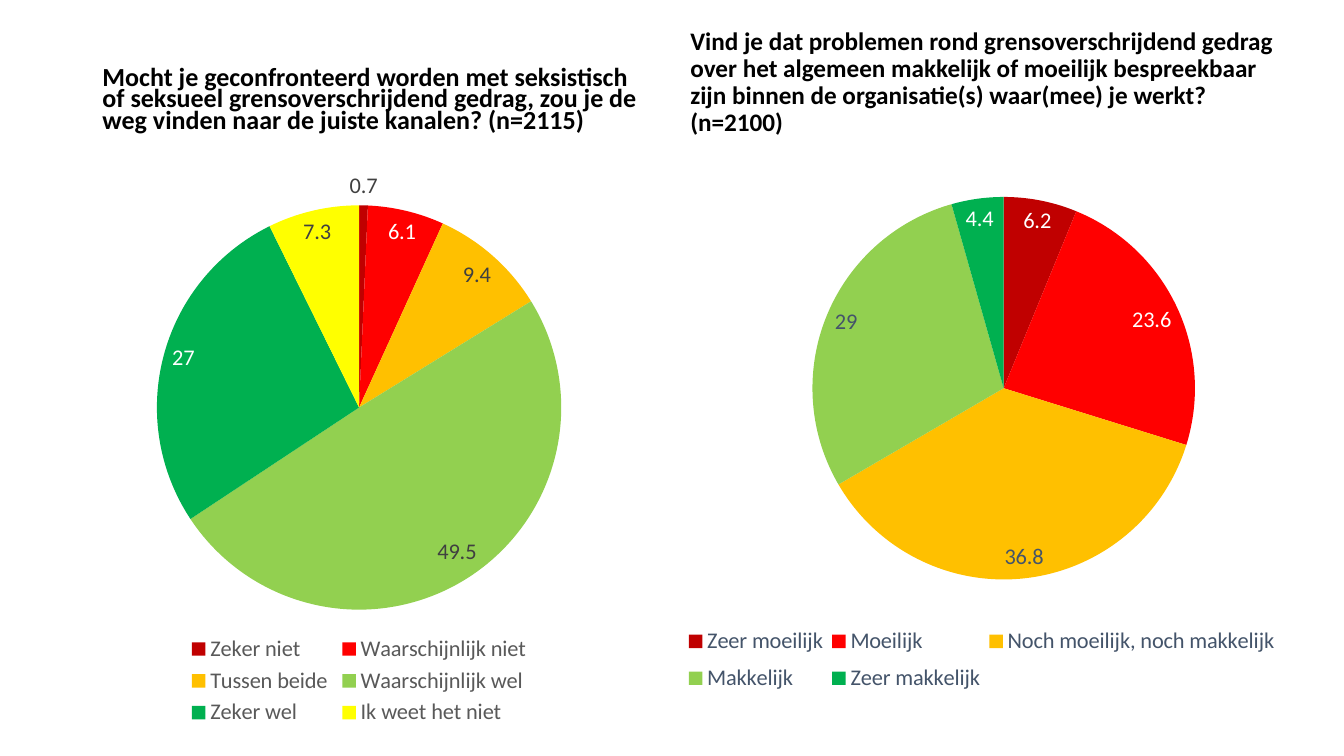
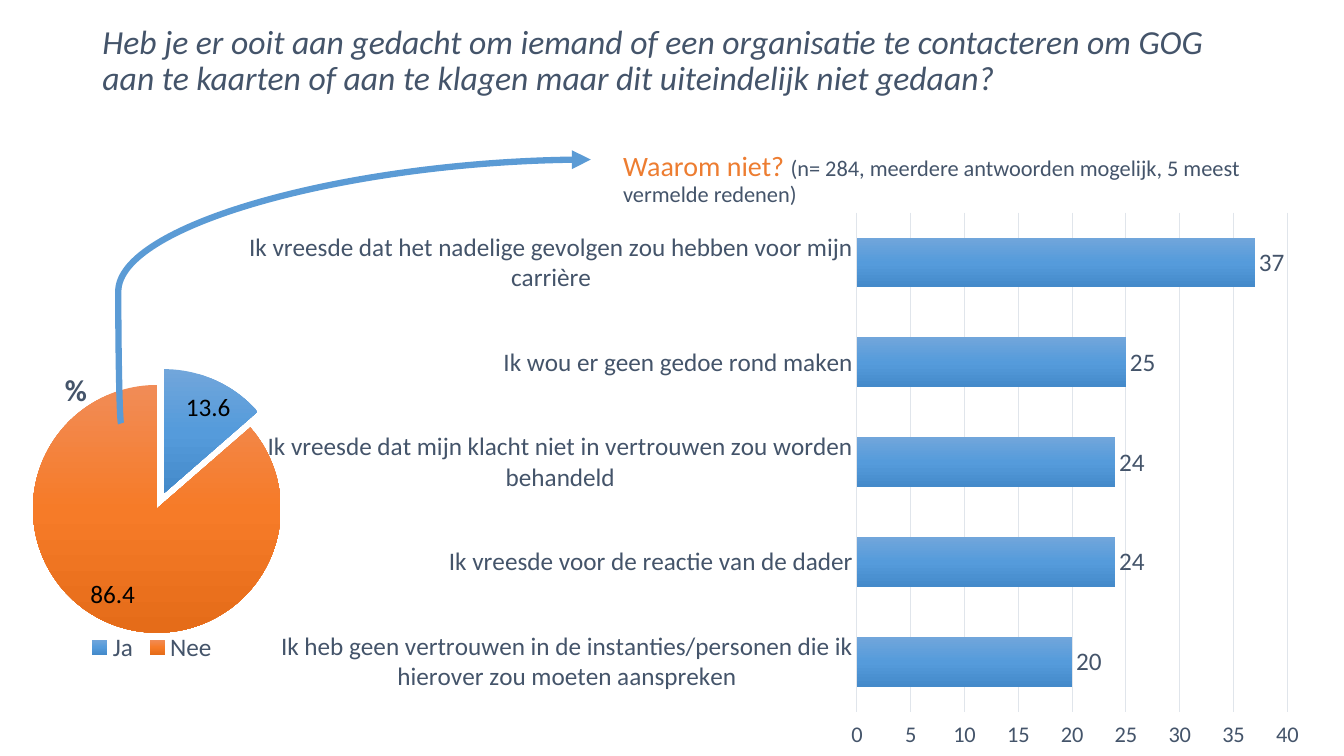
from lxml import etree
from pptx import Presentation
from pptx.chart.data import CategoryChartData
from pptx.dml.color import RGBColor
from pptx.enum.chart import (XL_CHART_TYPE, XL_LABEL_POSITION, XL_LEGEND_POSITION,
                             XL_TICK_LABEL_POSITION, XL_TICK_MARK)
from pptx.enum.shapes import MSO_CONNECTOR
from pptx.enum.text import MSO_ANCHOR, MSO_AUTO_SIZE, PP_ALIGN
from pptx.oxml.ns import qn
from pptx.util import Pt

PIE, BAR = XL_CHART_TYPE.PIE, XL_CHART_TYPE.BAR_CLUSTERED
BEST_FIT, OUTSIDE_END = XL_LABEL_POSITION.BEST_FIT, XL_LABEL_POSITION.OUTSIDE_END
LEGEND_BOTTOM = XL_LEGEND_POSITION.BOTTOM
TICK_NONE = XL_TICK_MARK.NONE
TICK_LABELS_HIGH = XL_TICK_LABEL_POSITION.HIGH
CURVE = MSO_CONNECTOR.CURVE
ANCHOR_BOTTOM = MSO_ANCHOR.BOTTOM
FIXED_SIZE = MSO_AUTO_SIZE.NONE
ALIGN_LEFT = PP_ALIGN.LEFT

FONT = "Calibri"
TITLE_ONLY = 5

BLACK = RGBColor(0x00, 0x00, 0x00)
WHITE = RGBColor(0xFF, 0xFF, 0xFF)
SLATE = RGBColor(0x44, 0x54, 0x6A)
GREY = RGBColor(0x59, 0x59, 0x59)
DARK_GREY = RGBColor(0x40, 0x40, 0x40)
GRID = RGBColor(0xE0, 0xE5, 0xEB)
ORANGE = RGBColor(0xED, 0x7D, 0x31)
BLUE = RGBColor(0x5B, 0x9B, 0xD5)
DARK_RED = RGBColor(0xC0, 0x00, 0x00)
RED = RGBColor(0xFF, 0x00, 0x00)
AMBER = RGBColor(0xFF, 0xC0, 0x00)
LIGHT_GREEN = RGBColor(0x92, 0xD0, 0x50)
GREEN = RGBColor(0x00, 0xB0, 0x50)
YELLOW = RGBColor(0xFF, 0xFF, 0x00)

ANSWER_COLORS = [DARK_RED, RED, AMBER, LIGHT_GREEN, GREEN, YELLOW]
BLUE_GRADIENT = ["71A6DB", "559BDB", "448ACA"]
ORANGE_GRADIENT = ["F18C57", "F67B28", "E56C19"]


# Text
def format_font(font, size, color, bold=False, italic=False):
    font.name, font.size = FONT, Pt(size)
    font.bold, font.italic = bold, italic
    font.color.rgb = color


def write_text(shape, box, runs, line_spacing=0.9, bold=False, italic=False):
    """Place a shape and fill it with (text, size, color) runs."""
    shape.left, shape.top, shape.width, shape.height = map(Pt, box)
    frame = shape.text_frame
    frame.word_wrap = True
    frame.auto_size = FIXED_SIZE
    frame.vertical_anchor = ANCHOR_BOTTOM
    paragraph = frame.paragraphs[0]
    paragraph.alignment = ALIGN_LEFT
    paragraph.line_spacing = line_spacing
    paragraph.space_before = Pt(10)
    for text, size, color in runs:
        run = paragraph.add_run()
        run.text = text
        format_font(run.font, size, color, bold, italic)


def add_text(slide, box, runs, **text_format):
    write_text(slide.shapes.add_textbox(*map(Pt, box)), box, runs, **text_format)


def add_titled_slide(presentation, box, runs, **title_format):
    slide = presentation.slides.add_slide(presentation.slide_layouts[TITLE_ONLY])
    write_text(slide.shapes.title, box, runs, **title_format)
    return slide


# Charts
def set_layout(parent, index, **values):
    """Give a chart part a manual layout, in fractions of the chart."""
    for old in parent.findall(qn("c:layout")):
        parent.remove(old)
    layout = etree.Element(qn("c:layout"))
    manual = etree.SubElement(layout, qn("c:manualLayout"))
    for name, value in values.items():
        etree.SubElement(manual, qn(f"c:{name}")).set("val", str(value))
    parent.insert(index, layout)


def set_plot_area(chart, x, y, w, h):
    plot_area = chart._chartSpace.find(".//" + qn("c:plotArea"))
    set_layout(plot_area, 0, layoutTarget="inner", xMode="edge", yMode="edge",
               x=x, y=y, w=w, h=h)


def set_legend_area(chart, x, y, w, h):
    set_layout(chart.legend._element, 1, xMode="edge", yMode="edge",
               x=x, y=y, w=w, h=h)


def fill_part(part, colors):
    """Fill a series or point with one colour or a vertical gradient."""
    fill = part.format.fill
    if isinstance(colors, RGBColor):
        fill.solid()
        fill.fore_color.rgb = colors
        return
    fill.gradient()
    fill.gradient_angle = 270
    stops = part.format._element.find(".//" + qn("a:gsLst"))
    for stop in list(stops):
        stops.remove(stop)
    for number, color in enumerate(colors):
        stop = etree.SubElement(stops, qn("a:gs"), pos=str(number * 50000))
        etree.SubElement(stop, qn("a:srgbClr"), val=color)


def add_chart(slide, kind, box, name, answers, label_size, label_color, position):
    data = CategoryChartData()
    data.categories = answers.keys()
    data.add_series(name, answers.values())
    chart = slide.shapes.add_chart(kind, *map(Pt, box), data).chart
    chart.has_title = False
    chart.has_legend = False
    format_font(chart.font, label_size, BLACK)
    labels = chart.series[0].data_labels
    labels.show_value = True
    labels.position = position
    format_font(labels.font, label_size, label_color)
    return chart


def add_pie(slide, box, name, answers, colors, size, label_color, legend_color,
            white_labels=()):
    chart = add_chart(slide, PIE, box, name, answers, size, label_color, BEST_FIT)
    chart.plots[0].vary_by_categories = True
    chart.has_legend = True
    chart.legend.position = LEGEND_BOTTOM
    chart.legend.include_in_layout = False
    format_font(chart.legend.font, size, legend_color)
    points = chart.series[0].points
    for index, color in zip(range(len(answers)), colors):
        fill_part(points[index], color)
    for index in white_labels:
        label = points[index].data_label
        format_font(label.font, size, WHITE)
        label.position = BEST_FIT
    return chart


def add_pie_title(chart, text, x, y):
    chart.has_title = True
    title = chart.chart_title
    run = title.text_frame.paragraphs[0].add_run()
    run.text = text
    format_font(run.font, 21.6, SLATE, bold=True)
    set_layout(title._element, 1, xMode="edge", yMode="edge", x=x, y=y)


def explode_point(chart, index, percent):
    point = chart.series[0]._element.get_or_add_dPt_for_point(index)
    explosion = etree.Element(qn("c:explosion"), val=str(percent))
    point.find(qn("c:spPr")).addprevious(explosion)


def add_bars(slide, box, name, answers):
    chart = add_chart(slide, BAR, box, name, answers, 18, SLATE, OUTSIDE_END)
    plot = chart.plots[0]
    plot.gap_width = 100
    plot.vary_by_categories = False
    fill_part(chart.series[0], BLUE_GRADIENT)

    categories, values = chart.category_axis, chart.value_axis
    for axis, size in ((categories, 18), (values, 16)):
        axis.major_tick_mark = axis.minor_tick_mark = TICK_NONE
        format_font(axis.tick_labels.font, size, SLATE)

    # Reversed categories put the high end, and so the scale, at the bottom
    categories.reverse_order = True
    values.tick_label_position = TICK_LABELS_HIGH
    values.minimum_scale, values.maximum_scale, values.major_unit = 0, 40, 5
    for numbers in (chart.series[0].data_labels, values.tick_labels):
        numbers.number_format = "0"
        numbers.number_format_is_linked = False
    values.format.line.fill.background()
    values.has_major_gridlines = True
    for line in (categories.format.line, values.major_gridlines.format.line):
        line.color.rgb = GRID
        line.width = Pt(0.75)
    return chart


# Arrow
def add_curved_arrow(slide, start, end, bend):
    connector = slide.shapes.add_connector(CURVE, *map(Pt, start + end))
    connector.line.color.rgb = BLUE
    connector.line.width = Pt(4.5)
    properties = connector._element.spPr
    line = properties.find(qn("a:ln"))
    etree.SubElement(line, qn("a:tailEnd"), type="triangle")
    etree.SubElement(properties, qn("a:effectLst"))
    geometry = properties.find(qn("a:prstGeom"))
    adjustments = geometry.find(qn("a:avLst"))
    if adjustments is None:
        adjustments = etree.SubElement(geometry, qn("a:avLst"))
    etree.SubElement(adjustments, qn("a:gd"), name="adj1", fmla=f"val {bend}")


# Slides
def build_channels_slide(presentation):
    slide = add_titled_slide(
        presentation, (66, 34.5, 406, 65),
        [("Mocht je geconfronteerd worden met seksistisch of seksueel "
          "grensoverschrijdend gedrag, zou je de weg vinden naar de juiste "
          "kanalen? (n=2115)", 18.6, BLACK)], line_spacing=0.7, bold=True)
    add_text(
        slide, (486, 36.5, 435.5, 65),
        [("Vind je dat problemen rond grensoverschrijdend gedrag over het "
          "algemeen makkelijk of moeilijk bespreekbaar zijn binnen de "
          "organisatie(s) waar(mee) je werkt? (n=2100)", 18, BLACK)], bold=True)
    channels = {"Zeker niet": 0.7, "Waarschijnlijk niet": 6.1,
                "Tussen beide": 9.4, "Waarschijnlijk wel": 49.5,
                "Zeker wel": 27, "Ik weet het niet": 7.3}
    add_pie(slide, (41, 113, 431, 409), "Kanalen", channels, ANSWER_COLORS,
            16, DARK_GREY, GREY, white_labels=(1, 4))
    openness = {"Zeer moeilijk": 6.2, "Moeilijk": 23.6,
                "Noch moeilijk, noch makkelijk": 36.8, "Makkelijk": 29,
                "Zeer makkelijk": 4.4}
    chart = add_pie(slide, (472, 113, 449.5, 396), "Bespreekbaar", openness,
                    ANSWER_COLORS, 16, SLATE, SLATE, white_labels=(0, 1, 4))
    set_plot_area(chart, 0.23, 0.07, 0.63, 0.69)
    set_legend_area(chart, 0.03, 0.83, 0.96, 0.15)


def build_reasons_slide(presentation):
    slide = add_titled_slide(
        presentation, (66, 8.5, 808.5, 65),
        [("Heb je er ooit aan gedacht om iemand of een organisatie te "
          "contacteren om GOG aan te kaarten of aan te klagen maar dit "
          "uiteindelijk niet gedaan?", 24, SLATE)], italic=True)
    reasons = {
        "Ik vreesde dat het nadelige gevolgen zou hebben voor mijn carrière": 37,
        "Ik wou er geen gedoe rond maken": 25,
        "Ik vreesde dat mijn klacht niet in vertrouwen zou worden behandeld": 24,
        "Ik vreesde voor de reactie van de dader": 24,
        "Ik heb geen vertrouwen in de instanties/personen die ik hierover zou "
        "moeten aanspreken": 20}
    bars = add_bars(slide, (151, 151.5, 809, 388), "Redenen", reasons)
    set_plot_area(bars, 0.57, 0, 0.38, 0.92)
    add_text(
        slide, (438, 81.5, 497, 70),
        [("Waarom niet? ", 20, ORANGE),
         ("(n= 284, meerdere antwoorden mogelijk, 5 meest vermelde redenen)",
          16, SLATE)])
    pie = add_pie(slide, (-9.5, 250, 236, 227), "%", {"Ja": 13.6, "Nee": 86.4},
                  [BLUE_GRADIENT, ORANGE_GRADIENT], 18, BLACK, SLATE)
    add_pie_title(pie, "%", 0.22, 0.04)
    explode_point(pie, 0, 14)
    set_plot_area(pie, 0.14, 0.1, 0.75, 0.8)
    add_curved_arrow(slide, (86.5, 302.5), (422, 114), bend=-600)


def main():
    presentation = Presentation()
    presentation.slide_width, presentation.slide_height = Pt(960), Pt(540)
    build_channels_slide(presentation)
    build_reasons_slide(presentation)
    presentation.save("out.pptx")


if __name__ == "__main__":
    main()
